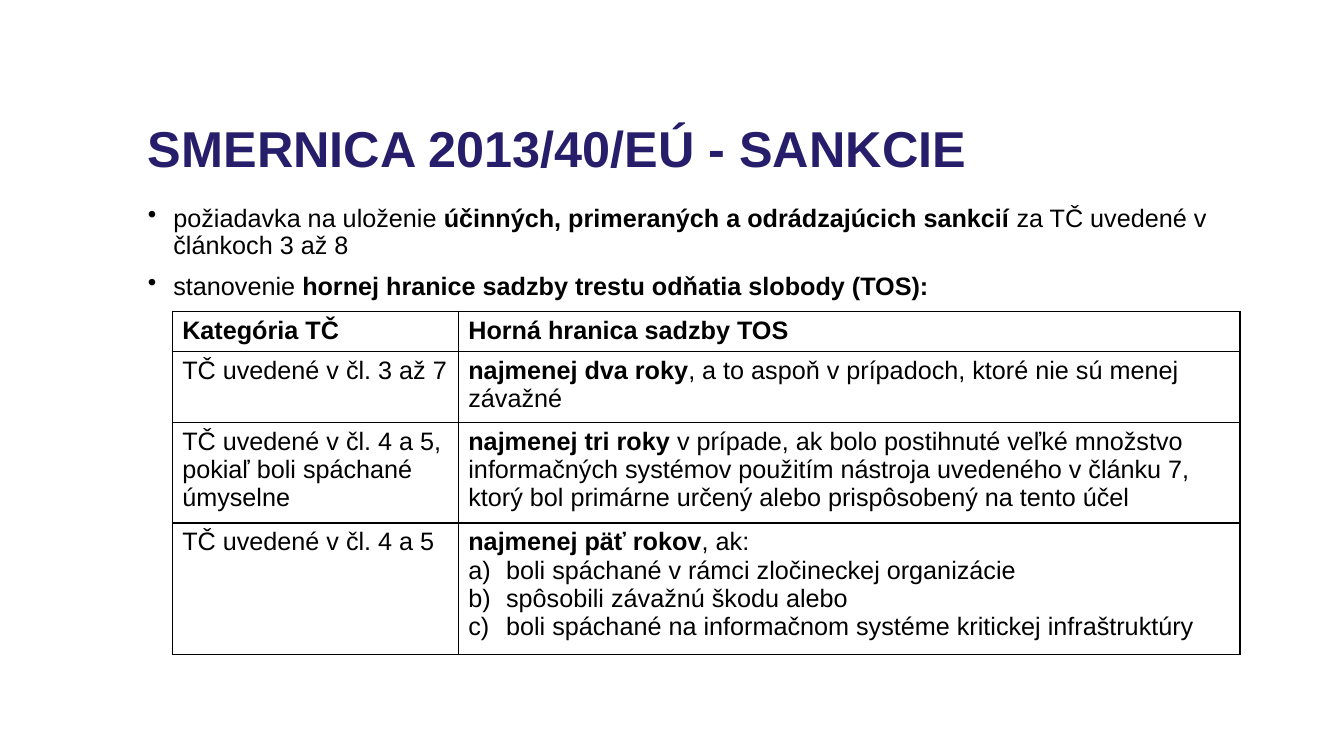
from pptx import Presentation
from pptx.dml.color import RGBColor
from pptx.enum.text import MSO_ANCHOR
from pptx.oxml import parse_xml
from pptx.oxml.ns import nsdecls
from pptx.util import Cm, Pt

TOP = MSO_ANCHOR.TOP

# Text between asterisks is bold; a leading ")" marks a lettered item.
TITLE = "*SMERNICA 2013/40/EÚ - SANKCIE*"
POINTS = [
    "požiadavka na uloženie *účinných, primeraných a odrádzajúcich sankcií *"
    "za TČ uvedené v článkoch 3 až 8",
    "stanovenie *hornej hranice sadzby trestu odňatia slobody (TOS):*",
]
ROWS = [
    (["*Kategória TČ*"], ["*Horná hranica sadzby TOS*"]),
    (["TČ uvedené v čl. 3 až 7 "],
     ["*najmenej dva roky*, a to aspoň v prípadoch, ktoré nie sú menej závažné"]),
    (["TČ uvedené v čl. 4 a 5, pokiaľ boli spáchané úmyselne"],
     ["*najmenej tri roky *v prípade, ak bolo postihnuté veľké množstvo "
      "informačných systémov použitím nástroja uvedeného v článku 7, "
      "ktorý bol primárne určený alebo prispôsobený na tento účel"]),
    (["TČ uvedené v čl. 4 a 5"],
     ["*najmenej päť rokov*, ak:",
      ")boli spáchané v rámci zločineckej organizácie",
      ")spôsobili závažnú škodu alebo",
      ")boli spáchané na informačnom systéme kritickej infraštruktúry"]),
]
THEME = {
    "font": "Arial",
    "title": (36, RGBColor(0x26, 0x1E, 0x6A)),
    "body": (18, RGBColor(0, 0, 0)),
    "border": "000000",
    "spacing": 0.9,
}
LEFT = 3.48
TITLE_BOX = (LEFT, 3.0, 28.07, 2.08)
BODY_BOX = (LEFT, 5.05, 28.24, 2.7)
TABLE_AT = (4.34, 7.84)
WIDTHS = [7.21, 19.7]
HEIGHTS = [1.02, 1.69, 2.4, 3.1]
DOT = '<a:buChar {} char="•"/>'
LETTER = '<a:buAutoNum {} type="alphaLcParenR"/>'


def bullet(para, mark, indent):
    props = para._p.get_or_add_pPr()
    props.set("marL", str(Cm(indent)))
    props.set("indent", str(-Cm(indent)))
    props.append(parse_xml(mark.format(nsdecls("a"))))


def write(para, text, style):
    """Add the text as runs, with the parts between asterisks in bold."""
    size, color = style
    for index, part in enumerate(text.split("*")):
        if part:
            run = para.add_run()
            run.text = part
            run.font.name = THEME["font"]
            run.font.size = Pt(size)
            run.font.bold = index % 2 == 1
            run.font.color.rgb = color


def fill_frame(frame, lines, style):
    for index, line in enumerate(lines):
        para = frame.add_paragraph() if index else frame.paragraphs[0]
        if line.startswith(")"):
            bullet(para, LETTER, 0.95)
        write(para, line.lstrip(")"), style)
    return frame.paragraphs


def add_text(slide, box, lines, style):
    frame = slide.shapes.add_textbox(*map(Cm, box)).text_frame
    frame.word_wrap = True
    frame.vertical_anchor = TOP
    paras = fill_frame(frame, lines, style)
    for para in paras:
        para.line_spacing = THEME["spacing"]
    return paras


def outline(cell):
    props = cell._tc.get_or_add_tcPr()
    for index, side in enumerate(("lnL", "lnR", "lnT", "lnB")):
        props.insert(index, parse_xml(
            f'<a:{side} {nsdecls("a")} w="{Pt(1)}"><a:solidFill>'
            f'<a:srgbClr val="{THEME["border"]}"/></a:solidFill></a:{side}>'))


def add_grid(slide):
    size = (sum(WIDTHS), sum(HEIGHTS))
    table = slide.shapes.add_table(
        len(ROWS), len(WIDTHS), *map(Cm, TABLE_AT + size)).table
    table.first_row = table.horz_banding = False
    for column, width in zip(table.columns, WIDTHS):
        column.width = Cm(width)
    for row, height, texts in zip(table.rows, HEIGHTS, ROWS):
        row.height = Cm(height)
        for cell, lines in zip(row.cells, texts):
            cell.fill.background()
            outline(cell)
            fill_frame(cell.text_frame, lines, THEME["body"])


def main():
    deck = Presentation()
    deck.slide_width, deck.slide_height = Cm(33.87), Cm(19.05)
    slide = deck.slides.add_slide(deck.slide_layouts[6])
    add_text(slide, TITLE_BOX, [TITLE], THEME["title"])
    points = add_text(slide, BODY_BOX, POINTS, THEME["body"])
    for index, para in enumerate(points):
        bullet(para, DOT, 0.64)
        para.space_before = Pt(10 if index else 0)
    add_grid(slide)
    deck.save("out.pptx")


if __name__ == "__main__":
    main()
